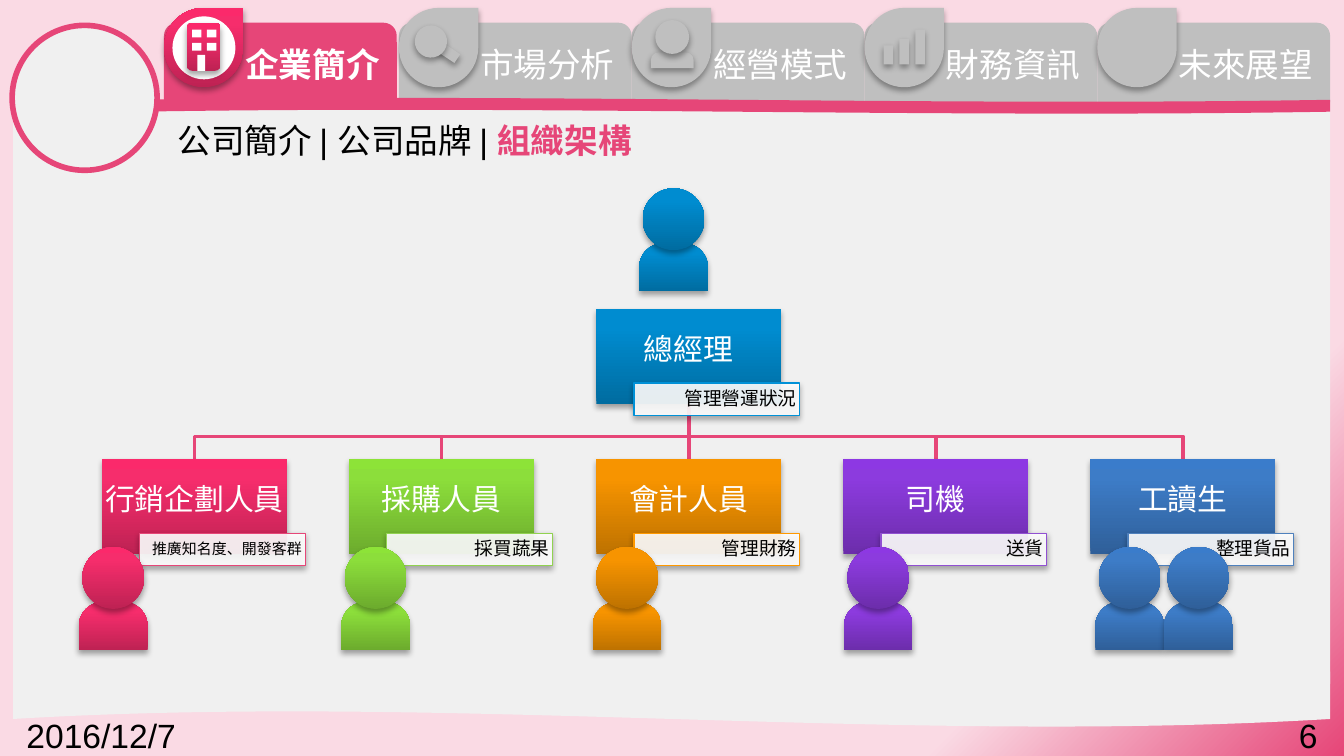
import pptx
import pptx.dml.color
import pptx.enum.shapes
import pptx.enum.text
import pptx.oxml
import pptx.oxml.ns
import pptx.util
from lxml import etree

Cm = pptx.util.Cm
RGBColor = pptx.dml.color.RGBColor
Shape = pptx.enum.shapes.MSO_SHAPE
Align = pptx.enum.text.PP_ALIGN
Anchor = pptx.enum.text.MSO_ANCHOR
qn = pptx.oxml.ns.qn

WHITE = RGBColor(0xFF, 0xFF, 0xFF)
BLACK = RGBColor(0x00, 0x00, 0x00)
GREY = RGBColor(0xBF, 0xBF, 0xBF)
PANEL = RGBColor(0xF0, 0xF0, 0xF0)
ROSE = RGBColor(0xE6, 0x46, 0x78)
PALE_ROSE = RGBColor(0xFA, 0xDA, 0xE4)
SKY = RGBColor(0x00, 0x91, 0xD7)
LIME = RGBColor(0x91, 0xD2, 0x50)
ORANGE = RGBColor(0xFF, 0x99, 0x00)
VIOLET = RGBColor(0x91, 0x50, 0xD2)
STEEL = RGBColor(0x4F, 0x81, 0xBD)


def shades(dark, middle, light):
    return [(0, dark), (80, middle), (100, light)]


SHADES = {
    ROSE: shades(RGBColor(0xBE, 0x22, 0x53), RGBColor(0xF6, 0x2D, 0x6C), RGBColor(0xFB, 0x29, 0x6B)),
    SKY: shades(RGBColor(0x00, 0x6C, 0xA0), RGBColor(0x00, 0x8C, 0xD0), RGBColor(0x00, 0x8D, 0xD1)),
    LIME: shades(RGBColor(0x6C, 0xAB, 0x2D), RGBColor(0x8C, 0xDE, 0x3B), RGBColor(0x8D, 0xE3, 0x38)),
    ORANGE: shades(RGBColor(0xBE, 0x72, 0x00), RGBColor(0xF7, 0x94, 0x00), RGBColor(0xF8, 0x95, 0x00)),
    VIOLET: shades(RGBColor(0x6C, 0x2D, 0xAB), RGBColor(0x8C, 0x3B, 0xDE), RGBColor(0x8D, 0x38, 0xE3)),
    STEEL: shades(RGBColor(0x2F, 0x5F, 0x99), RGBColor(0x3D, 0x7C, 0xC7), RGBColor(0x3A, 0x7C, 0xCB)),
}

STAFF = [
    ("行銷企劃人員", "推廣知名度、開發客群", 8, ROSE, [1.49]),
    ("採購人員", "採買蔬果", 10, LIME, [6.45]),
    ("會計人員", "管理財務", 10, ORANGE, [11.2]),
    ("司機", "送貨", 10, VIOLET, [15.95]),
    ("工讀生", "整理貨品", 10, STEEL, [20.7, 22]),
]
NODE_WIDTH, NODE_HEIGHT, NODE_PITCH = 3.49, 1.8, 4.67
FIRST_NODE_LEFT, STAFF_TOP, MANAGER_TOP = 1.93, 8.68, 5.84
IDLE_TABS = ["市場分析", "經營模式", "財務資訊", "未來展望"]


def fill_gradient(fill, element, stops, angle):
    fill.gradient()
    gradient = element.find(".//" + qn("a:gradFill"))
    stop_list = gradient.find(qn("a:gsLst"))
    for stop in list(stop_list):
        stop_list.remove(stop)
    for position, color in stops:
        stop = etree.SubElement(stop_list, qn("a:gs"), pos=str(position * 1000))
        etree.SubElement(stop, qn("a:srgbClr"), val=str(color))
    gradient.find(qn("a:lin")).set("ang", str(angle * 60000))


def add_shadow(shape):
    effects = shape.element.spPr.find(qn("a:effectLst"))
    shadow = etree.SubElement(effects, qn("a:outerShdw"), blurRad="40000", dist="23000",
                              dir="5400000", rotWithShape="0")
    color = etree.SubElement(shadow, qn("a:srgbClr"), val=str(BLACK))
    etree.SubElement(color, qn("a:alpha"), val="35000")


def draw(slide, kind, box, paint, line=None, line_width=0.75, shadow=False, adjustments=()):
    shape = slide.shapes.add_shape(kind, *(Cm(length) for length in box))
    for index, value in enumerate(adjustments):
        shape.adjustments[index] = value
    if isinstance(paint, list):
        fill_gradient(shape.fill, shape.element, paint, 270)
    else:
        shape.fill.solid()
        shape.fill.fore_color.rgb = paint
    if line is None:
        shape.line.fill.background()
    else:
        shape.line.color.rgb = line
        shape.line.width = pptx.util.Pt(line_width)
    shape.shadow.inherit = False
    if shadow:
        add_shadow(shape)
    return shape


def format_run(run, size, color, bold=False):
    run.font.name = "Arial"
    run.font.size = pptx.util.Pt(size)
    run.font.color.rgb = color
    run.font.bold = bold


def write(shape, text, size, color, align, anchor=Anchor.MIDDLE, bold=False, margins=None):
    frame = shape.text_frame
    frame.word_wrap = True
    frame.vertical_anchor = anchor
    frame.text = text
    paragraph = frame.paragraphs[0]
    paragraph.alignment = align
    format_run(paragraph.runs[0], size, color, bold)
    if margins:
        frame.margin_left = frame.margin_right = Cm(margins[0])
        frame.margin_top, frame.margin_bottom = Cm(margins[1]), Cm(margins[2])
        paragraph.line_spacing = 0.9


def add_person(slide, left, top, paint, width=1.3, body_offset=1.04, body_height=0.91, head=1.17):
    draw(slide, Shape.ROUND_2_SAME_RECTANGLE, (left, top + body_offset, width, body_height),
         paint, shadow=True, adjustments=(0.5, 0))
    draw(slide, Shape.OVAL, (left + (width - head) / 2, top, head, head), paint, shadow=True)


def add_building(slide, left, top, paint):
    draw(slide, Shape.ROUNDED_RECTANGLE, (left + 0.43, top, 0.64, 0.91), paint, shadow=True)
    for row in range(2):
        for column in range(2):
            draw(slide, Shape.RECTANGLE,
                 (left + 0.53 + 0.28 * column, top + 0.13 + 0.25 * row, 0.18, 0.15), WHITE)
    draw(slide, Shape.RECTANGLE, (left + 0.63, top + 0.61, 0.15, 0.3), WHITE)


def add_magnifier(slide, left, top, paint):
    handle = draw(slide, Shape.RECTANGLE, (left + 0.71, top + 0.46, 0.43, 0.2), paint, shadow=True)
    lens = draw(slide, Shape.OVAL, (left + 0.3, top + 0.05, 0.61, 0.61), paint, shadow=True)
    handle.rotation = lens.rotation = 33.8


def add_user(slide, left, top, paint):
    add_person(slide, left + 0.36, top - 0.05, paint, 0.81, 0.61, 0.3, 0.64)


def add_bars(slide, left, top, paint):
    for index, height in enumerate((0.36, 0.48, 0.66)):
        draw(slide, Shape.RECTANGLE, (left + 0.36 + 0.3 * index, top + 0.79 - height, 0.18, height),
             paint, shadow=True)


def add_tab(slide, left, top, text, icon, active=False):
    paint = SHADES[ROSE] if active else GREY
    tab = draw(slide, Shape.ROUND_2_SAME_RECTANGLE, (left, top, 4.4, 1.5), ROSE if active else GREY)
    write(tab, text, 18, WHITE, Align.RIGHT, bold=active)
    draw(slide, Shape.TEAR, (left, top - 0.28, 1.5, 1.5), paint, shadow=True)
    draw(slide, Shape.OVAL, (left + 0.16, top - 0.12, 1.19, 1.19), WHITE if active else GREY)
    if icon:
        icon(slide, left, top, paint)


def add_backdrop(slide, left, top, width):
    draw(slide, Shape.RECTANGLE, (left, top, width, 11), PANEL)
    draw(slide, Shape.WAVE, (left, top + 10.62, width, 1.19), PANEL)
    draw(slide, Shape.WAVE, (left + 2.37, top - 0.08, width - 2.37, 0.3), ROSE)
    draw(slide, Shape.OVAL, (left - 0.02, top - 1.45, 2.74, 2.74), PANEL, ROSE, 3)


def add_title(slide, left, top, width, height):
    title = slide.shapes.title
    title.element.getparent().append(title.element)
    title.left, title.top, title.width, title.height = map(Cm, (left, top, width, height))
    write(title, "公司簡介 | 公司品牌 | ", 18, BLACK, Align.LEFT, Anchor.TOP)
    title.text_frame.auto_size = pptx.enum.text.MSO_AUTO_SIZE.NONE
    current = title.text_frame.paragraphs[0].add_run()
    current.text = "組織架構"
    format_run(current, 18, ROSE, True)


def add_footer_text(slide, left, top, text, align):
    box = slide.shapes.add_textbox(Cm(left), Cm(top), Cm(5.92), Cm(0.76))
    write(box, text, 18, BLACK, align, Anchor.TOP)


def add_branch(slide, start_x, start_y, end_x, end_y):
    if start_x == end_x:
        branch = slide.shapes.add_connector(pptx.enum.shapes.MSO_CONNECTOR.STRAIGHT,
                                            *map(Cm, (start_x, start_y, end_x, end_y)))
        etree.SubElement(branch.element.spPr, qn("a:effectLst"))
    else:
        bend_y = end_y - 0.43
        builder = slide.shapes.build_freeform(Cm(start_x), Cm(start_y))
        points = [(start_x, bend_y), (end_x, bend_y), (end_x, end_y)]
        builder.add_line_segments([(Cm(x), Cm(y)) for x, y in points], close=False)
        branch = builder.convert_to_shape()
        branch.fill.background()
        branch.shadow.inherit = False
    branch.line.color.rgb = ROSE
    branch.line.width = pptx.util.Pt(2)


def add_node(slide, left, top, role, duty, duty_size, color):
    node = draw(slide, Shape.RECTANGLE, (left, top, NODE_WIDTH, NODE_HEIGHT), SHADES[color], shadow=True)
    write(node, role, 16, WHITE, Align.CENTER, margins=(0.03, 0.03, 0.25))
    label = draw(slide, Shape.RECTANGLE, (left + 0.71, top + 1.4, 3.13, 0.61), WHITE, color, shadow=True)
    fill_color = label.element.spPr.find(qn("a:solidFill")).find(qn("a:srgbClr"))
    etree.SubElement(fill_color, qn("a:alpha"), val="90000")
    write(label, duty, duty_size, BLACK, Align.RIGHT, margins=(0.06, 0.03, 0.03))


def add_organization(slide):
    lefts = [FIRST_NODE_LEFT + NODE_PITCH * index for index in range(len(STAFF))]
    manager_left = lefts[len(lefts) // 2]
    for left in lefts:
        add_branch(slide, manager_left + NODE_WIDTH / 2, MANAGER_TOP + NODE_HEIGHT,
                   left + NODE_WIDTH / 2, STAFF_TOP)
    add_node(slide, manager_left, MANAGER_TOP, "總經理", "管理營運狀況", 10, SKY)
    for left, (role, duty, size, color, _) in zip(lefts, STAFF):
        add_node(slide, left, STAFF_TOP, role, duty, size, color)
    add_person(slide, 12.08, 3.56, SHADES[SKY])
    for *_, color, person_lefts in STAFF:
        for left in person_lefts:
            add_person(slide, left, 10.34, SHADES[color])


def main():
    presentation = pptx.Presentation()
    presentation.slide_width, presentation.slide_height = Cm(25.4), Cm(14.29)
    slide = presentation.slides.add_slide(presentation.slide_layouts[5])
    fill_gradient(slide.background.fill, slide.element, [(80, PALE_ROSE), (100, ROSE)], 45)
    icons = [add_magnifier, add_user, add_bars, None]
    for index, (text, icon) in enumerate(zip(IDLE_TABS, icons)):
        add_tab(slide, 7.54 + 4.4 * index, 0.43, text, icon)
    add_tab(slide, 3.1, 0.43, "企業簡介", add_building, active=True)
    add_backdrop(slide, 0.25, 1.93, 24.89)
    add_title(slide, 3.1, 2.13, 12.85, 1.02)
    add_footer_text(slide, 0.25, 13.39, "2016/12/7", Align.LEFT)
    add_footer_text(slide, 19.23, 13.39, "6", Align.RIGHT)
    add_organization(slide)
    presentation.save("out.pptx")


if __name__ == "__main__":
    main()
